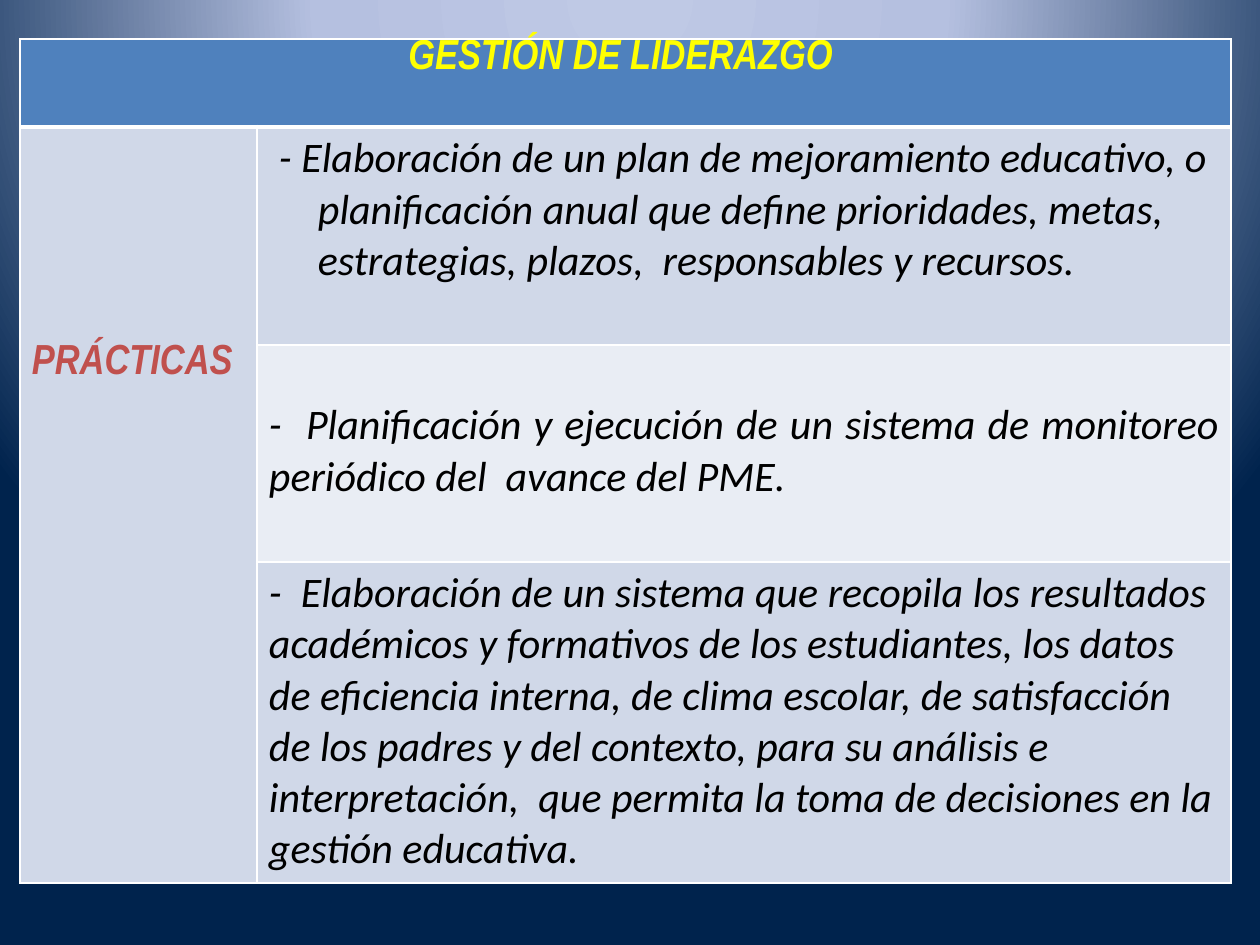
import pptx
import pptx.util
import pptx.dml.color
import pptx.enum.text
import pptx.oxml
import pptx.oxml.ns

PX = 914400 // 126
RGB = pptx.dml.color.RGBColor
ALIGN = pptx.enum.text.PP_ALIGN
WHITE = RGB(0xFF, 0xFF, 0xFF)
BLACK = RGB(0, 0, 0)
YELLOW = RGB(0xFF, 0xFF, 0)
RED = RGB(0xC0, 0x50, 0x4D)
HEADER_BLUE = RGB(0x4F, 0x81, 0xBD)
DARK_BAND = RGB(0xD0, 0xD8, 0xE8)
LIGHT_BAND = RGB(0xE9, 0xED, 0xF4)
BACKDROP = [
    (0, RGB(0xBF, 0xC9, 0xE5)),
    (40, RGB(0xB5, 0xC0, 0xE0)),
    (100, RGB(0x00, 0x23, 0x4D)),
]
COLUMNS = [237, 974]
ROWS = [88, 218, 217, 321]
PRACTICES = [
    ("- Elaboración de un plan de mejoramiento educativo, o  planificación anual que define "
     "prioridades, metas, estrategias, plazos,  responsables y recursos.",
     DARK_BAND, 6, ALIGN.LEFT),
    ("-  Planificación y ejecución de un sistema de monitoreo periódico del  avance del PME.",
     LIGHT_BAND, 55, ALIGN.JUSTIFY),
    ("-  Elaboración de un sistema que recopila los resultados académicos y formativos de los "
     "estudiantes, los datos de eficiencia interna, de clima escolar, de satisfacción de los "
     "padres y del contexto, para su análisis e interpretación,  que permita la toma de "
     "decisiones en la gestión educativa.",
     DARK_BAND, 6, ALIGN.LEFT),
]


def px(length):
    return pptx.util.Emu(length * PX)


def paint_background(slide):
    fill = slide.background.fill
    fill.gradient()
    namespace = pptx.oxml.ns.nsdecls("a")
    stops = "".join(
        f'<a:gs pos="{position * 1000}"><a:srgbClr val="{color}"/></a:gs>'
        for position, color in BACKDROP
    )
    gradient = pptx.oxml.parse_xml(
        f'<a:gradFill {namespace} rotWithShape="1"><a:gsLst>{stops}</a:gsLst>'
        '<a:path path="circle"><a:fillToRect l="50000" t="-80000" r="50000" b="180000"/>'
        '</a:path></a:gradFill>'
    )
    blank_gradient = slide.background._cSld.find(".//" + pptx.oxml.ns.qn("a:gradFill"))
    blank_gradient.getparent().replace(blank_gradient, gradient)


def style_cell(cell, fill, top_width=1, bottom_width=1):
    widths = {"L": 1, "R": 1, "T": top_width, "B": bottom_width}
    properties = cell._tc.get_or_add_tcPr()
    for side, width in widths.items():
        properties.append(pptx.oxml.parse_xml(
            f'<a:ln{side} {pptx.oxml.ns.nsdecls("a")} w="{width * 12700}">'
            f'<a:solidFill><a:srgbClr val="{WHITE}"/></a:solidFill></a:ln{side}>'
        ))
    cell.fill.solid()
    cell.fill.fore_color.rgb = fill


def write_cell(cell, text, font_name, color, bold, align, top):
    cell.margin_left = cell.margin_right = px(12)
    cell.margin_top = px(top)
    cell.margin_bottom = px(0)
    cell.text = text
    paragraph = cell.text_frame.paragraphs[0]
    paragraph.alignment = align
    font = paragraph.font
    font.name = font_name
    font.size = pptx.util.Pt(24)
    font.bold = bold
    font.italic = True
    font.color.rgb = color
    return paragraph


def hang_first_line(paragraph, left, first_line):
    properties = paragraph._p.get_or_add_pPr()
    properties.set("marL", str(px(left)))
    properties.set("indent", str(px(first_line)))


def add_leadership_table(slide):
    table = slide.shapes.add_table(
        len(ROWS), len(COLUMNS), px(20), px(39), px(sum(COLUMNS)), px(sum(ROWS))
    ).table
    for column, width in zip(table.columns, COLUMNS):
        column.width = px(width)
    for row, height in zip(table.rows, ROWS):
        row.height = px(height)

    table.cell(0, 0).merge(table.cell(0, 1))
    table.cell(1, 0).merge(table.cell(3, 0))
    for column in range(len(COLUMNS)):
        style_cell(table.cell(0, column), HEADER_BLUE, bottom_width=3)
    write_cell(table.cell(0, 0), "GESTIÓN DE LIDERAZGO ", "Arial Narrow", YELLOW,
               True, ALIGN.CENTER, 0)
    write_cell(table.cell(1, 0), "PRÁCTICAS", "Arial Narrow", RED,
               True, ALIGN.LEFT, 217)

    for row, (practice, band, top, align) in enumerate(PRACTICES, start=1):
        top_width = 3 if row == 1 else 1
        style_cell(table.cell(row, 0), DARK_BAND, top_width)
        style_cell(table.cell(row, 1), band, top_width)
        paragraph = write_cell(table.cell(row, 1), practice, "Calibri", BLACK,
                               False, align, top)
        if row == 1:
            hang_first_line(paragraph, 49, -39)


def main():
    presentation = pptx.Presentation()
    presentation.slide_width = px(1260)
    presentation.slide_height = px(945)
    slide = presentation.slides.add_slide(presentation.slide_layouts[6])
    paint_background(slide)
    add_leadership_table(slide)
    presentation.save("out.pptx")


if __name__ == "__main__":
    main()
